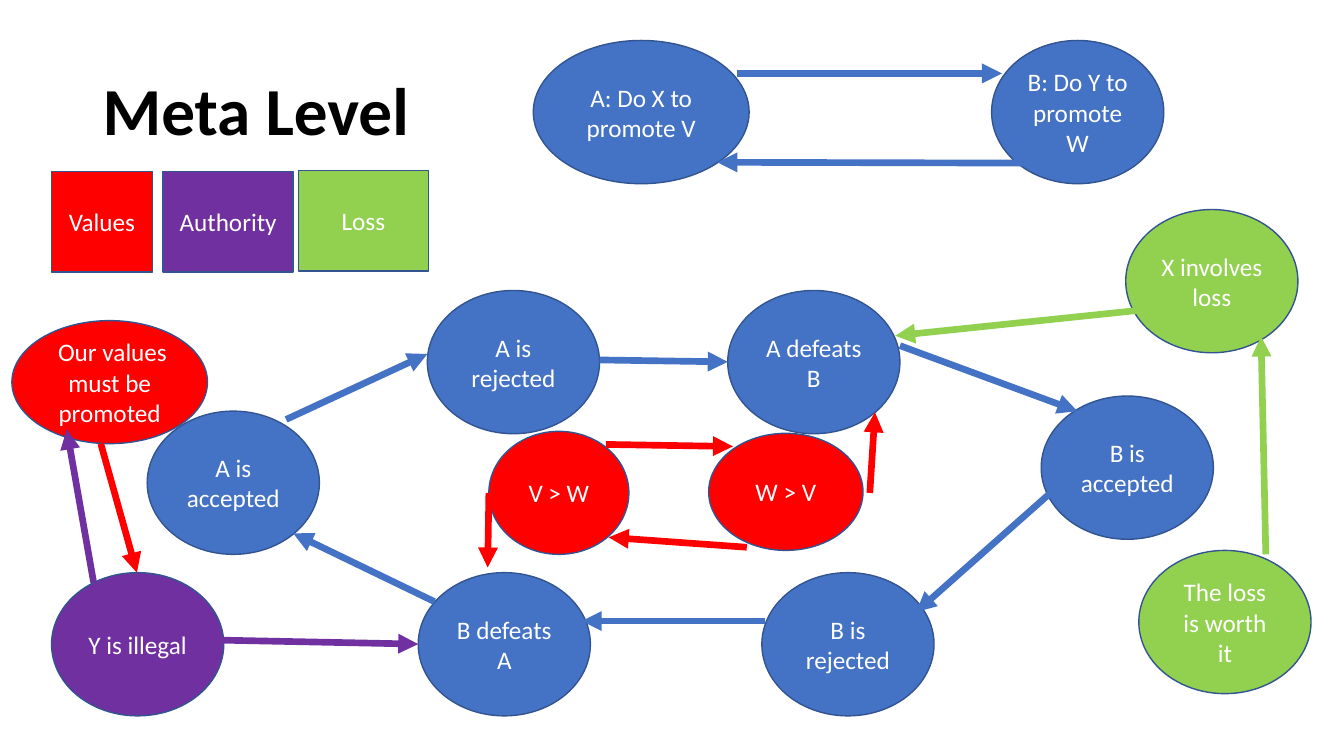
from dataclasses import dataclass

from lxml import etree
from pptx import Presentation
from pptx import util as u
from pptx.dml.color import RGBColor
from pptx.enum import shapes, text
from pptx.oxml.ns import qn
from pptx.slide import Slide

FONT = "Calibri"
HUES = {
    "blue": "4472C4",
    "red": "FF0000",
    "purple": "7030A0",
    "green": "92D050",
    "edge": "325491",
    "white": "FFFFFF",
    "black": "000000",
}
OVAL = shapes.MSO_SHAPE.OVAL
BOX = shapes.MSO_SHAPE.RECTANGLE


@dataclass
class Node:
    """A labelled shape; lengths in centimetres."""
    label: str
    hue: str
    left: float
    top: float
    width: float = 4.34
    height: float = 3.61
    kind: shapes.MSO_SHAPE = OVAL


@dataclass
class Arrow:
    """A straight arrow from (x1, y1) to (x2, y2) in centimetres."""
    hue: str
    x1: float
    y1: float
    x2: float
    y2: float


NODES = [
    Node("A is accepted", "blue", 3.71, 10.36),
    Node("A is rejected", "blue", 10.77, 7.32),
    Node("A defeats B", "blue", 18.34, 7.32),
    Node("B is accepted", "blue", 26.24, 9.98),
    Node("B defeats A", "blue", 10.54, 14.43),
    Node("B is rejected", "blue", 19.2, 14.43),
    Node("A: Do X to promote V", "blue", 13.44, 1.02, 5.44),
    Node("B: Do Y to promote W", "blue", 24.99, 1.02),
    Node("V > W", "red", 12.32, 10.87, 3.53, 3.1),
    Node("W > V", "red", 17.86, 10.92, 3.89, 2.95),
    Node("Values", "red", 1.3, 4.32, 2.54, 2.54, BOX),
    Node("Authority", "purple", 4.11, 4.32, 3.28, 2.54, BOX),
    Node("Y is illegal", "purple", 1.3, 14.43),
    Node("Loss", "green", 7.52, 4.29, 3.28, 2.54, BOX),
    Node("X involves\nloss", "green", 28.37, 5.28),
    Node("The loss is worth it", "green", 28.7, 13.87),
    Node(" Our values\nmust be promoted", "red", 0.3, 8.08, 4.93, 3.1),
]

ARROWS = [
    Arrow("blue", 18.57, 1.85, 25.25, 1.85),
    Arrow("blue", 25.98, 4.11, 18.08, 4.09),
    Arrow("blue", 26.62, 12.29, 23.09, 15.42),
    Arrow("blue", 19.28, 15.65, 14.66, 15.65),
    Arrow("blue", 10.95, 15.16, 7.39, 13.44),
    Arrow("blue", 7.21, 10.57, 10.77, 8.92),
    Arrow("blue", 15.11, 9.07, 18.34, 9.12),
    Arrow("blue", 22.68, 8.71, 27.15, 10.36),
    Arrow("red", 15.27, 11.2, 18.47, 11.25),
    Arrow("red", 18.82, 13.79, 15.34, 13.54),
    Arrow("red", 12.32, 12.42, 12.29, 14.3),
    Arrow("red", 21.92, 12.42, 22.05, 10.39),
    Arrow("purple", 5.54, 16.13, 10.54, 16.23),
    Arrow("green", 28.7, 7.82, 22.56, 8.46),
    Arrow("green", 31.9, 13.97, 31.78, 8.48),
    Arrow("red", 2.54, 11.18, 3.45, 14.43),
    Arrow("purple", 2.36, 14.68, 1.68, 10.82),
]


def color(name: str) -> RGBColor:
    return RGBColor.from_string(HUES[name])


def write(shape, words: str, size: float, hue: str, align: text.PP_ALIGN,
          bold: bool = False) -> None:
    frame = shape.text_frame
    frame.text = words
    frame.word_wrap = True
    frame.auto_size = text.MSO_AUTO_SIZE.NONE
    frame.vertical_anchor = text.MSO_ANCHOR.MIDDLE
    for para in frame.paragraphs:
        para.alignment = align
        for run in para.runs:
            run.font.name = FONT
            run.font.size = u.Pt(size)
            run.font.bold = bold
            run.font.color.rgb = color(hue)


def add_title(slide: Slide) -> None:
    title = slide.shapes.title
    title.left, title.top = u.Cm(2.33), u.Cm(1.02)
    title.width, title.height = u.Cm(29.21), u.Cm(3.68)
    write(title, "Meta Level", 48, "black", text.PP_ALIGN.LEFT, True)
    title.text_frame.paragraphs[0].line_spacing = 0.9


def add_node(slide: Slide, node: Node) -> None:
    shape = slide.shapes.add_shape(
        node.kind, u.Cm(node.left), u.Cm(node.top),
        u.Cm(node.width), u.Cm(node.height))
    shape.shadow.inherit = False
    shape.fill.solid()
    shape.fill.fore_color.rgb = color(node.hue)
    shape.line.color.rgb = color("edge")
    shape.line.width = u.Pt(1)
    write(shape, node.label, 18, "white", text.PP_ALIGN.CENTER)


def add_arrow(slide: Slide, arrow: Arrow) -> None:
    link = slide.shapes.add_connector(
        shapes.MSO_CONNECTOR.STRAIGHT, u.Cm(arrow.x1), u.Cm(arrow.y1),
        u.Cm(arrow.x2), u.Cm(arrow.y2))
    link.line.color.rgb = color(arrow.hue)
    link.line.width = u.Pt(4.75)
    props = link.element.spPr
    etree.SubElement(props.find(qn("a:ln")), qn("a:tailEnd"), type="triangle")
    etree.SubElement(props, qn("a:effectLst"))


def main() -> None:
    deck = Presentation()
    deck.slide_width, deck.slide_height = u.Cm(33.87), u.Cm(19.05)
    slide = deck.slides.add_slide(deck.slide_layouts[5])
    add_title(slide)
    for node in NODES:
        add_node(slide, node)
    for arrow in ARROWS:
        add_arrow(slide, arrow)
    deck.save("out.pptx")


if __name__ == "__main__":
    main()
